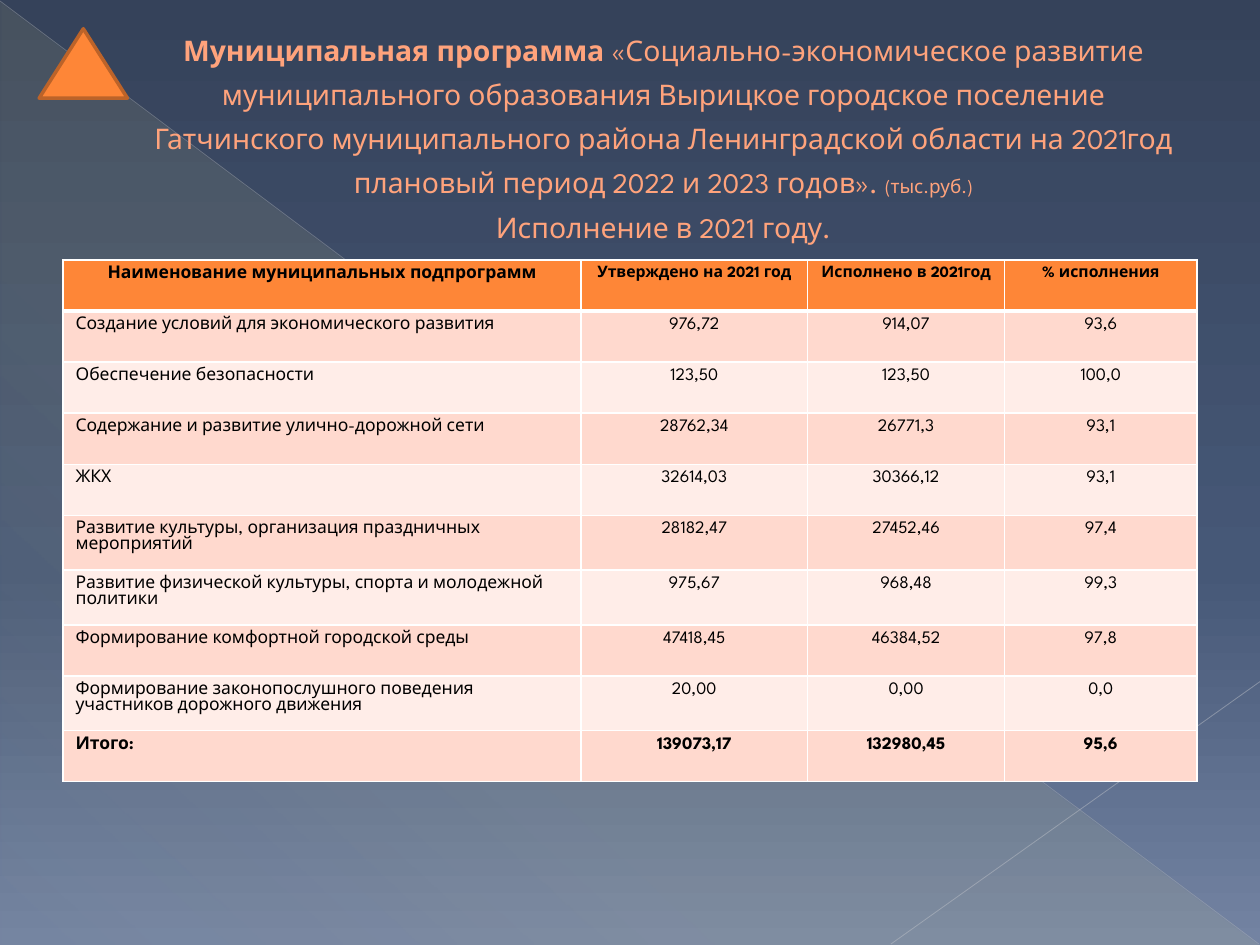
import pptx
import pptx.util
import pptx.dml.color
import pptx.enum.shapes
import pptx.enum.text
import pptx.oxml
import pptx.oxml.ns
import lxml.etree

Cm = pptx.util.Cm
Pt = pptx.util.Pt
RGBColor = pptx.dml.color.RGBColor
Shape = pptx.enum.shapes.MSO_SHAPE
Align = pptx.enum.text.PP_ALIGN
qn = pptx.oxml.ns.qn

FONT = "League Spartan"
BLACK = RGBColor(0x00, 0x00, 0x00)
WHITE = RGBColor(0xFF, 0xFF, 0xFF)
ORANGE = RGBColor(0xFE, 0x86, 0x37)
DARK_ORANGE = RGBColor(0xBC, 0x63, 0x29)
PEACH = RGBColor(0xFF, 0xA3, 0x7C)
BAND_DARK = RGBColor(0xFF, 0xD9, 0xCE)
BAND_LIGHT = RGBColor(0xFF, 0xED, 0xE8)
SKY_TOP = RGBColor(0x35, 0x42, 0x5A)
SKY_MIDDLE = RGBColor(0x46, 0x58, 0x77)
SKY_BOTTOM = RGBColor(0x73, 0x83, 0xA2)
GLOW = RGBColor(0xFF, 0xF3, 0x9D)
RAY_LONG = RGBColor(0xBA, 0xBD, 0xC4)
RAY_SHORT = RGBColor(0xC1, 0xC4, 0xCA)


def write(paragraph, text, size=10, color=BLACK, bold=False, align=None):
    paragraph.alignment = align
    run = paragraph.add_run()
    run.text = text
    run.font.name = FONT
    run.font.size = Pt(size)
    run.font.bold = bold
    run.font.color.rgb = color


def set_gradient(properties, stops, angle):
    stop_xml = "".join(
        f'<a:gs pos="{position * 1000}"><a:srgbClr val="{color}">'
        f'<a:alpha val="{opacity * 1000}"/></a:srgbClr></a:gs>'
        for position, color, opacity in stops
    )
    gradient = pptx.oxml.parse_xml(
        f'<a:gradFill {pptx.oxml.ns.nsdecls("a")} rotWithShape="1"><a:gsLst>{stop_xml}</a:gsLst>'
        f'<a:lin ang="{angle * 60000}" scaled="0"/></a:gradFill>'
    )
    solid = properties.find(qn("a:solidFill"))
    properties.replace(solid, gradient)


deck = pptx.Presentation()
deck.slide_width = Cm(25.4)
deck.slide_height = Cm(19.05)
slide = deck.slides.add_slide(deck.slide_layouts[6])

slide.background.fill.solid()
slide.background.fill.fore_color.rgb = SKY_TOP
background = slide._element.cSld.find(qn("p:bg")).find(qn("p:bgPr"))
set_gradient(background, [(0, SKY_TOP, 100), (60, SKY_MIDDLE, 100), (100, SKY_BOTTOM, 100)], 90)

glow = slide.shapes.add_shape(Shape.RIGHT_TRIANGLE, Cm(0.02), Cm(0.04), Cm(25.36), Cm(19))
glow.shadow.inherit = False
glow.line.fill.background()
glow.fill.solid()
glow.fill.fore_color.rgb = GLOW
set_gradient(glow._element.spPr, [(0, GLOW, 10), (70, GLOW, 8), (100, GLOW, 1)], 133)

for x1, y1, x2, y2, color, width, opacity in [
    (0, 0.02, 25.38, 19.03, RAY_LONG, 0.39, 35),
    (25.4, 13.74, 17.96, 19.03, RAY_SHORT, 0.47, 45),
]:
    ray = slide.shapes.add_connector(
        pptx.enum.shapes.MSO_CONNECTOR.STRAIGHT, Cm(x1), Cm(y1), Cm(x2), Cm(y2)
    )
    ray.line.color.rgb = color
    ray.line.width = Pt(width)
    ray_color = ray._element.spPr.find(".//" + qn("a:srgbClr"))
    lxml.etree.SubElement(ray_color, qn("a:alpha"), val=str(opacity * 1000))
    lxml.etree.SubElement(ray._element.spPr, qn("a:effectLst"))

title = slide.shapes.add_textbox(Cm(1.27), Cm(0.74), Cm(22.86), Cm(3.89)).text_frame
title.word_wrap = True
title.vertical_anchor = pptx.enum.text.MSO_ANCHOR.MIDDLE
heading = title.paragraphs[0]
heading.line_spacing = 1.3
heading._p.get_or_add_pPr().set("marL", str(Cm(1.35)))
for text, size, bold in [
    ("Муниципальная программа ", 16.2, True),
    ("«Социально-экономическое развитие муниципального образования Вырицкое городское поселение "
     "Гатчинского муниципального района Ленинградской области на 2021год плановый период "
     "2022 и 2023 годов». ", 16.2, False),
    ("(тыс.руб.)", 10.8, False),
]:
    write(heading, text, size=size, color=PEACH, bold=bold, align=Align.CENTER)
heading.add_line_break()
write(heading, "Исполнение в 2021 году.", size=16.2, color=PEACH, align=Align.CENTER)

programs = [
    ("Наименование муниципальных подпрограмм", "Утверждено на 2021 год",
     "Исполнено в 2021год", "% исполнения"),
    ("Создание условий для экономического развития", "976,72", "914,07", "93,6"),
    ("Обеспечение безопасности", "123,50", "123,50", "100,0"),
    ("Содержание и развитие улично-дорожной сети", "28762,34", "26771,3", "93,1"),
    ("ЖКХ", "32614,03", "30366,12", "93,1"),
    ("Развитие культуры, организация праздничных мероприятий", "28182,47", "27452,46", "97,4"),
    ("Развитие физической культуры, спорта и молодежной политики", "975,67", "968,48", "99,3"),
    ("Формирование комфортной городской среды", "47418,45", "46384,52", "97,8"),
    ("Формирование законопослушного поведения участников дорожного движения",
     "20,00", "0,00", "0,0"),
    ("Итого:", "139073,17", "132980,45", "95,6"),
]
last_row = len(programs) - 1
budget = slide.shapes.add_table(
    len(programs), 4, Cm(1.27), Cm(5.24), Cm(22.86), Cm(10.3)
).table
for column, width in zip(budget.columns, (10.44, 4.57, 3.97, 3.88)):
    column.width = Cm(width)

for r, program in enumerate(programs):
    budget.rows[r].height = Cm(1.03)
    for c, text in enumerate(program):
        cell = budget.cell(r, c)
        write(
            cell.text_frame.paragraphs[0], text,
            size=9 if r == 0 and c > 0 else 10,
            bold=r in (0, last_row),
            align=Align.CENTER if r == 0 or c > 0 else Align.LEFT,
        )
        properties = cell._tc.get_or_add_tcPr()
        for side in ("lnL", "lnR", "lnT", "lnB"):
            thick = (r, side) in ((0, "lnB"), (1, "lnT"))
            border = lxml.etree.SubElement(properties, qn(f"a:{side}"), w=str(Pt(3 if thick else 1)))
            paint = lxml.etree.SubElement(border, qn("a:solidFill"))
            lxml.etree.SubElement(paint, qn("a:srgbClr"), val=str(WHITE))
        cell.fill.solid()
        cell.fill.fore_color.rgb = ORANGE if r == 0 else BAND_DARK if r % 2 else BAND_LIGHT

marker = slide.shapes.add_shape(Shape.ISOSCELES_TRIANGLE, Cm(0.79), Cm(0.58), Cm(1.78), Cm(1.4))
marker.shadow.inherit = False
marker.fill.solid()
marker.fill.fore_color.rgb = ORANGE
marker.line.color.rgb = DARK_ORANGE
marker.line.width = Pt(2)

deck.save("out.pptx")
